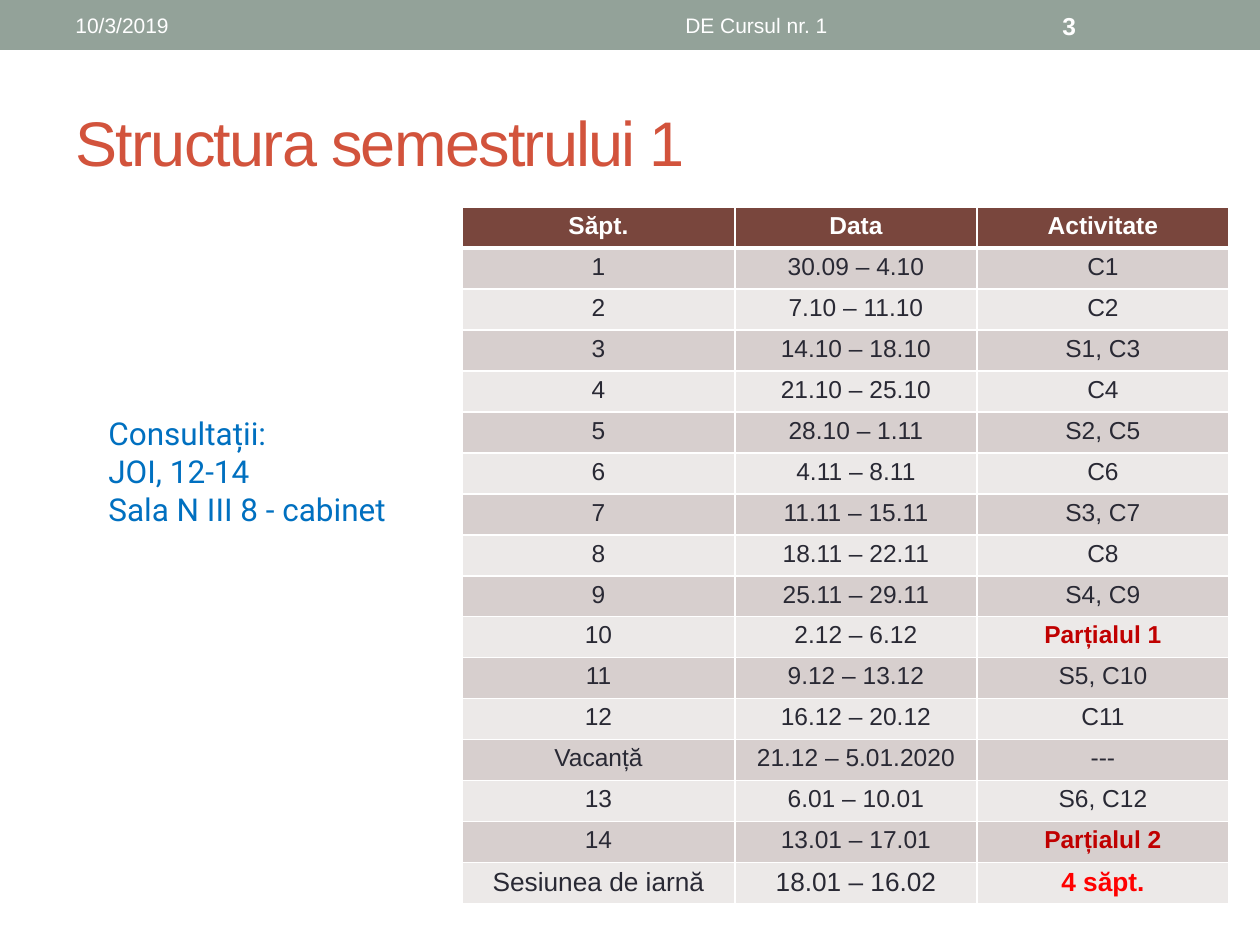
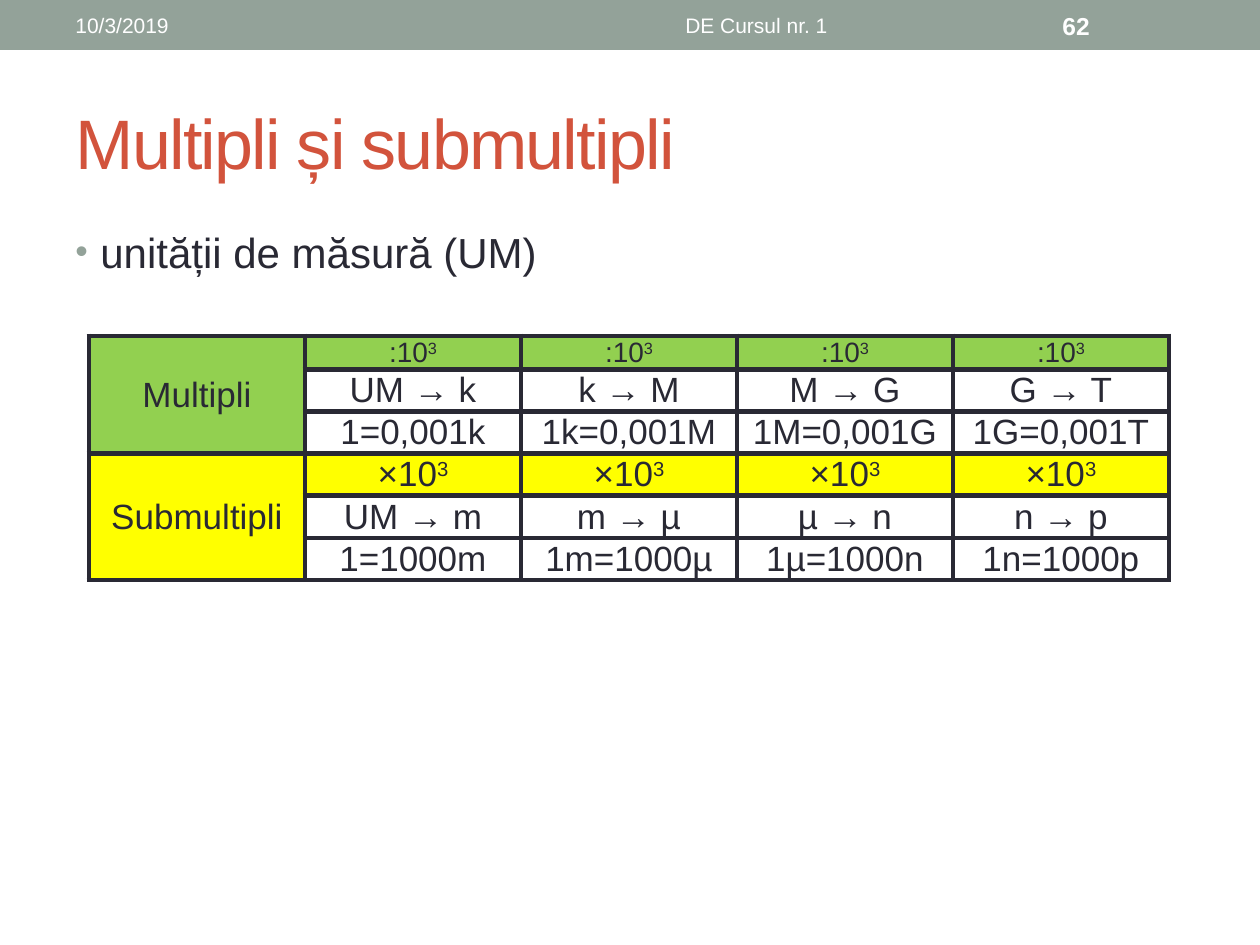
from pptx import Presentation, util as u
from pptx.dml.color import RGBColor
from pptx.enum import shapes, text
from pptx.oxml import parse_xml
from pptx.oxml.ns import nsdecls

BAND, TITLE, INK, WHITE = "93A299", "D2533C", "292934", "FFFFFF"
BLUE, BROWN, DARK, RED = "0070C0", "79463D", "C00000", "FF0000"
ROSE, PALE, GREEN, GOLD = "D7CFCE", "ECE9E8", "92D050", "FFFF00"
LEFT, MID = text.PP_ALIGN.LEFT, text.PP_ALIGN.CENTER

WEEKS = [
    ("Săpt.", "Data", "Activitate"),
    ("1", "30.09 – 4.10", "C1"),
    ("2", "7.10 – 11.10", "C2"),
    ("3", "14.10 – 18.10", "S1, C3"),
    ("4", "21.10 – 25.10", "C4"),
    ("5", "28.10 – 1.11", "S2, C5"),
    ("6", "4.11 – 8.11", "C6"),
    ("7", "11.11 – 15.11", "S3, C7"),
    ("8", "18.11 – 22.11", "C8"),
    ("9", "25.11 – 29.11", "S4, C9"),
    ("10", "2.12 – 6.12", "Parțialul 1"),
    ("11", "9.12 – 13.12", "S5, C10"),
    ("12", "16.12 – 20.12", "C11"),
    ("Vacanță", "21.12 – 5.01.2020", "---"),
    ("13", "6.01 – 10.01", "S6, C12"),
    ("14", "13.01 – 17.01", "Parțialul 2"),
    ("Sesiunea de iarnă", "18.01 – 16.02", "4 săpt."),
]
UNITS = [
    ("Multipli",) + (":10^3",) * 4,
    ("", "UM → k", "k → M", "M → G", "G → T"),
    ("", "1=0,001k", "1k=0,001M", "1M=0,001G", "1G=0,001T"),
    ("Submultipli",) + ("×10^3",) * 4,
    ("", "UM → m", "m → µ", "µ → n", "n → p"),
    ("", "1=1000m", "1m=1000µ", "1µ=1000n", "1n=1000p"),
]


def px(n):
    """Turn pixels into EMU."""
    return u.Inches(n / 126)


def rgb(code):
    """Turn a hex string into a colour."""
    return RGBColor.from_string(code)


def write(frame, words, size=12, color=INK, bold=False, font="Arial",
          align=LEFT, space=0):
    """Fill a text frame; a caret raises what follows it on the line."""
    frame.word_wrap = True
    for i, line in enumerate(words.split("\n")):
        para = frame.add_paragraph() if i else frame.paragraphs[0]
        para.alignment = align
        base, _, power = line.partition("^")
        for part in filter(None, (base, power)):
            run = para.add_run()
            run.text = part
            run.font.size, run.font.bold = u.Pt(size), bold
            run.font.name, run.font.color.rgb = font, rgb(color)
            props = run._r.get_or_add_rPr()
            if space:
                props.set("spc", str(space))
            if part is power:
                props.set("baseline", "30000")


def label(slide, box, words, anchor=text.MSO_ANCHOR.TOP, **style):
    """Add a text box and return its frame."""
    frame = slide.shapes.add_textbox(*map(px, box)).text_frame
    frame.vertical_anchor = anchor
    write(frame, words, **style)
    return frame


def bullet(para):
    """Give a paragraph a hanging round bullet."""
    para.space_before = u.Pt(4.8)
    props = para._p.get_or_add_pPr()
    props.set("marL", str(px(25)))
    props.set("indent", str(-px(25)))
    for tag in (f'buClr {nsdecls("a")}><a:srgbClr val="{BAND}"/></a:buClr',
                f'buSzPct {nsdecls("a")} val="85000"/',
                f'buFont {nsdecls("a")} typeface="Arial"/',
                f'buChar {nsdecls("a")} char="•"/'):
        props.append(parse_xml(f"<a:{tag}>"))


def edge(cell, color, **widths):
    """Draw cell borders, with widths in points by side."""
    props = cell._tc.get_or_add_tcPr()
    for i, side in enumerate("LRTB"):
        width = u.Pt(widths[side])
        props.insert(i, parse_xml(
            f'<a:ln{side} {nsdecls("a")} w="{width}"><a:solidFill>'
            f'<a:srgbClr val="{color}"/></a:solidFill></a:ln{side}>'))


def grid(slide, spot, cols, rows):
    """Add a table with the given column widths and row heights."""
    size = sum(cols), sum(rows)
    table = slide.shapes.add_table(
        len(rows), len(cols), *map(px, (*spot, *size))).table
    table.first_row = table.horz_banding = False
    for col, width in zip(table.columns, cols):
        col.width = px(width)
    for row, height in zip(table.rows, rows):
        row.height = px(height)
    return table


def put(cell, words, fill, pad, **style):
    """Set the fill, margins and centred text of a cell."""
    if fill:
        cell.fill.solid()
        cell.fill.fore_color.rgb = rgb(fill)
    else:
        cell.fill.background()
    cell.margin_left = cell.margin_right = px(pad[0])
    cell.margin_top = cell.margin_bottom = px(pad[1])
    write(cell.text_frame, words, align=MID, **style)


def start(deck, title, size, page):
    """Add a slide with its band, header texts and title."""
    slide = deck.slides.add_slide(deck.slide_layouts[5])
    band = slide.shapes.add_shape(
        shapes.MSO_SHAPE.RECTANGLE, 0, 0, deck.slide_width, px(50))
    band.shadow.inherit = False
    band.fill.solid()
    band.fill.fore_color.rgb = rgb(BAND)
    band.line.fill.background()
    head = slide.shapes.title
    head.left, head.top, head.width, head.height = map(px, (63, 73, 1134, 136))
    head.text_frame.vertical_anchor = text.MSO_ANCHOR.MIDDLE
    write(head.text_frame, title, size=size, color=TITLE, space=-100)
    for left, width, words, style in (
            (63, 399, "10/3/2019", {}),
            (473, 567, "DE Cursul nr. 1", {"align": MID}),
            (1050, 147, page, {"size": 14, "bold": True})):
        label(slide, (left, 3, width, 45), words, color=WHITE,
              anchor=text.MSO_ANCHOR.MIDDLE, **style)
    return slide


def plan(deck):
    """Build the semester calendar."""
    slide = start(deck, "Structura semestrului 1", 36, "3")
    label(slide, (96, 408, 325, 127),
          "Consultații:\nJOI, 12-14\nSala N III 8 - cabinet",
          size=18, color=BLUE, font="Roboto")
    table = grid(slide, (462, 207), (273, 242, 252), [41] * len(WEEKS))
    last = len(WEEKS) - 1
    for r, row in enumerate(WEEKS):
        fill = (ROSE if r % 2 else PALE) if r else BROWN
        for c, words in enumerate(row):
            exam = words.startswith("Parțialul")
            final = r == last and c == 2
            color = (WHITE if r == 0 else DARK if exam
                     else RED if final else INK)
            cell = table.cell(r, c)
            put(cell, words, fill, (10, 5), size=15 if r == last else 14,
                color=color, bold=r == 0 or exam or final)
            edge(cell, WHITE, L=1, R=1, T=3 if r == 1 else 1,
                 B=1 if r else 3)


def scale(deck):
    """Build the table of unit multiples."""
    slide = start(deck, "Multipli și submultipli", 40, "62")
    body = label(slide, (63, 220, 1134, 672), "unității de măsură (UM)",
                 size=24)
    bullet(body.paragraphs[0])
    table = grid(slide, (89, 336), [216] * 5, [31] + [39] * 5)
    for r, row in enumerate(UNITS):
        for c, words in enumerate(row):
            tint = GREEN if r < 3 else GOLD
            cell = table.cell(r, c)
            put(cell, words, tint if c == 0 or r % 3 == 0 else None, (9, 0),
                size=16 if r == 0 and c else 20)
            cell.vertical_anchor = text.MSO_ANCHOR.MIDDLE
            edge(cell, INK, L=3, R=3, T=3, B=3)
    for top in (0, 3):
        table.cell(top, 0).merge(table.cell(top + 2, 0))


def main():
    """Build and save the deck."""
    deck = Presentation()
    deck.slide_width, deck.slide_height = px(1260), px(945)
    plan(deck)
    scale(deck)
    deck.save("out.pptx")


if __name__ == "__main__":
    main()
